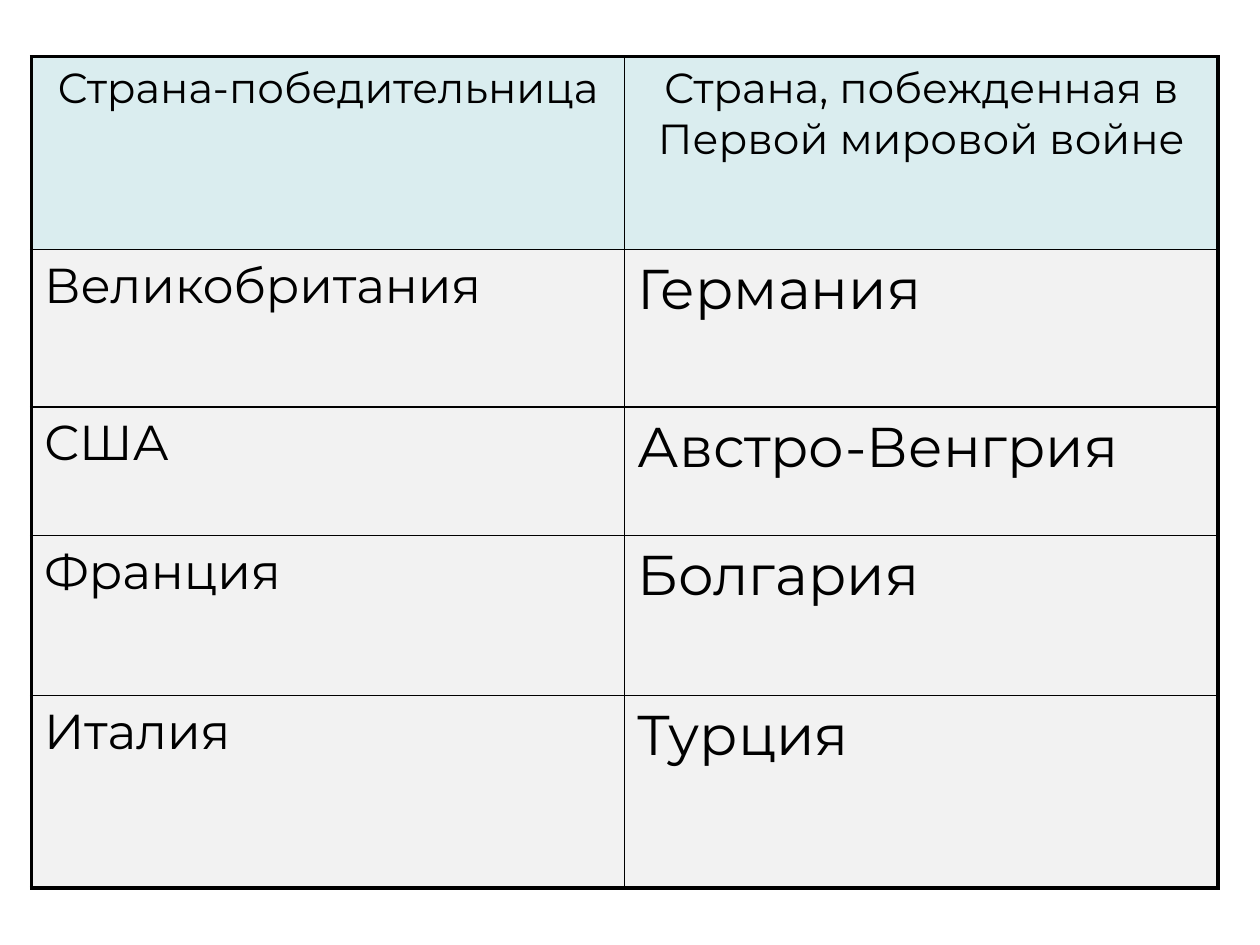
from dataclasses import dataclass

from lxml.etree import SubElement
from pptx import Presentation
from pptx.dml.color import RGBColor
from pptx.enum.text import PP_ALIGN
from pptx.oxml.ns import qn
from pptx.util import Pt

COLORS = {"text": "000000", "border": "000000", "header": "DAEDEF", "body": "F2F2F2"}
FONT = "Montserrat"
LEFT, TOP = 18, 32.4
COL_WIDTH = 339
INNER, OUTER = 1, 2.25
HEADER_SIZE = 24
BODY_SIZES = (28, 32)


@dataclass
class Row:
    height: float
    winner: str
    loser: str


ROWS = [
    Row(110.2, "Страна-победительница", "Страна, побежденная в Первой мировой войне"),
    Row(90, "Великобритания", "Германия"),
    Row(73.4, "США", "Австро-Венгрия"),
    Row(91.4, "Франция", "Болгария"),
    Row(110.2, "Италия", "Турция"),
]


def set_border(cell, side: str, width: float) -> None:
    ln = SubElement(cell._tc.get_or_add_tcPr(), qn(f"a:ln{side}"), w=str(int(Pt(width))))
    fill = SubElement(ln, qn("a:solidFill"))
    SubElement(fill, qn("a:srgbClr"), val=COLORS["border"])


def set_text(cell, text: str, size: float, align: PP_ALIGN) -> None:
    cell.text_frame.text = text
    p = cell.text_frame.paragraphs[0]
    p.alignment = align
    spacing = SubElement(p._p.get_or_add_pPr(), qn("a:spcBef"))
    SubElement(spacing, qn("a:spcPct"), val="20000")
    font = p.runs[0].font
    font.name = FONT
    font.size = Pt(size)
    font.bold = False
    font.color.rgb = RGBColor.from_string(COLORS["text"])


def draw_cell(cell, row: int, col: int, text: str) -> None:
    header = row == 0
    outer = {"L": col == 0, "R": col == 1, "T": header, "B": row == len(ROWS) - 1}
    for side, is_outer in outer.items():
        set_border(cell, side, OUTER if is_outer else INNER)
    cell.fill.solid()
    cell.fill.fore_color.rgb = RGBColor.from_string(COLORS["header" if header else "body"])
    size = HEADER_SIZE if header else BODY_SIZES[col]
    set_text(cell, text, size, PP_ALIGN.CENTER if header else PP_ALIGN.LEFT)


def draw_table(s, rows: list[Row]) -> None:
    height = sum(row.height for row in rows)
    sp = s.shapes.add_table(len(rows), 2, Pt(LEFT), Pt(TOP), Pt(2 * COL_WIDTH), Pt(height))
    table = sp.table
    table.horz_banding = False
    for col in table.columns:
        col.width = Pt(COL_WIDTH)
    for i, row in enumerate(rows):
        table.rows[i].height = Pt(row.height)
        for j, text in enumerate((row.winner, row.loser)):
            draw_cell(table.cell(i, j), i, j, text)


def main() -> None:
    prs = Presentation()
    prs.slide_width, prs.slide_height = Pt(720), Pt(540)
    s = prs.slides.add_slide(prs.slide_layouts[6])
    draw_table(s, ROWS)
    prs.save("out.pptx")


if __name__ == "__main__":
    main()
